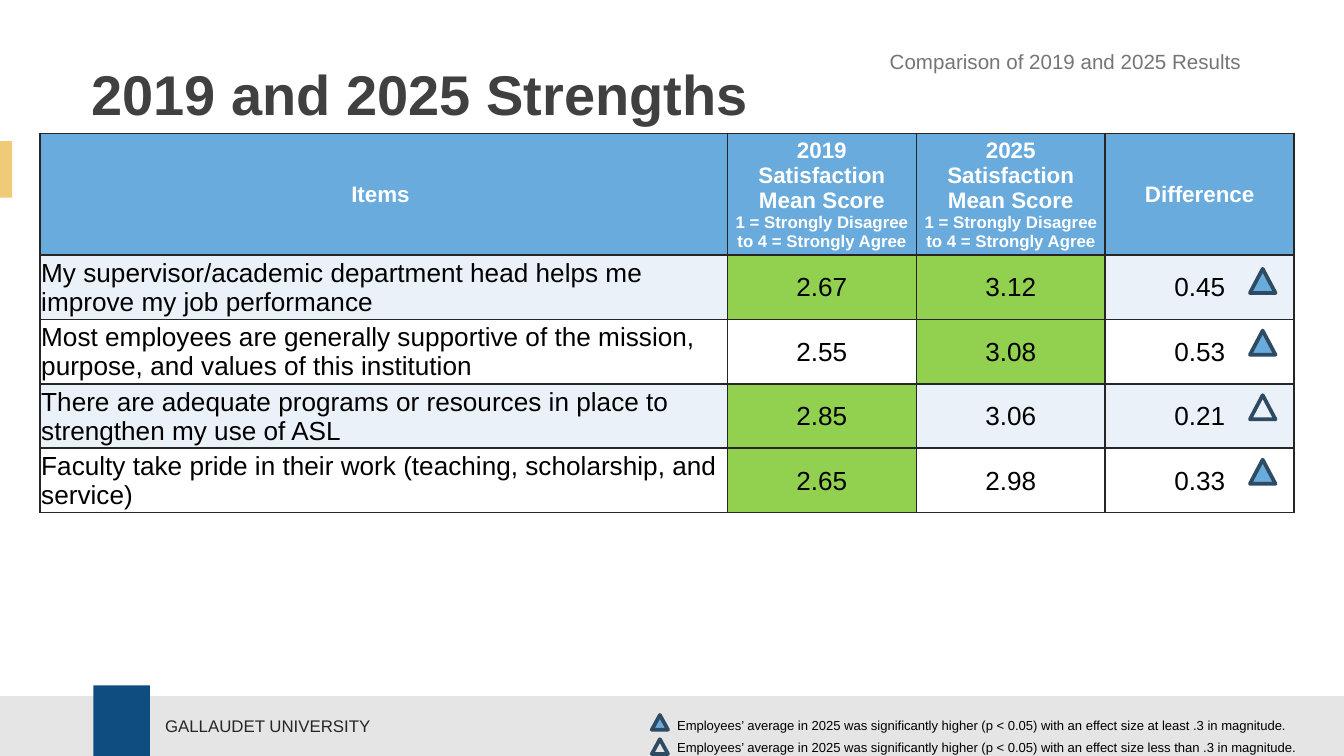
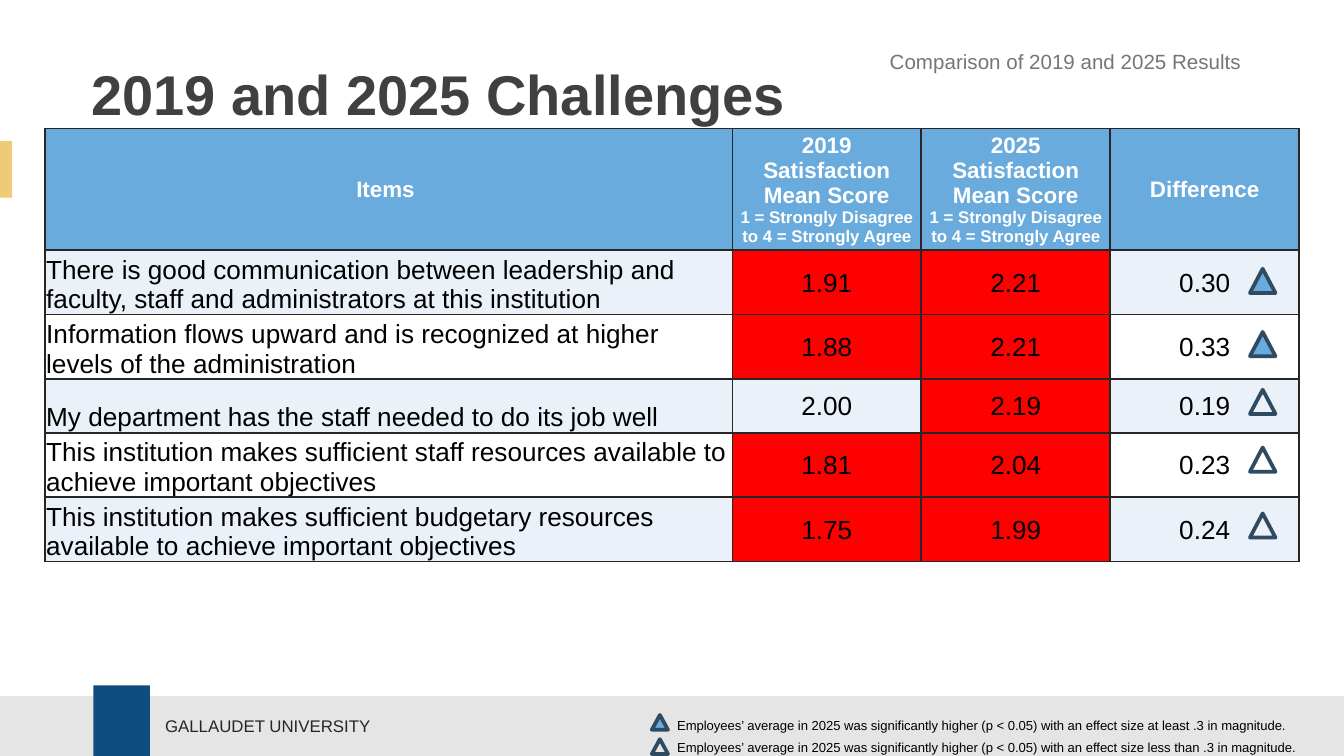
from dataclasses import dataclass

from lxml.etree import SubElement
from pptx import Presentation
from pptx.dml.color import RGBColor
from pptx.enum.shapes import MSO_SHAPE as Preset
from pptx.enum.text import MSO_ANCHOR as Anchor, MSO_AUTO_SIZE as AutoSize, PP_ALIGN as Align
from pptx.oxml.ns import qn
from pptx.util import Inches, Pt


@dataclass(frozen=True)
class Theme:
    font: str = "Arial"
    title: str = "404041"
    subtitle: str = "757575"
    footer: str = "252626"
    text: str = "000000"
    white: str = "FFFFFF"
    header: str = "69ABDD"
    band: str = "EBF1F9"
    border: str = "262626"
    strength: str = "92D050"
    challenge: str = "FF0000"
    marker_line: str = "2E4B61"
    accent: str = "EFCA77"
    footer_band: str = "E5E5E5"
    footer_block: str = "0F4D81"
    title_size: float = 30
    subtitle_size: float = 11
    footer_size: float = 9
    header_size: float = 12
    scale_size: float = 9
    cell_size: float = 14
    legend_size: float = 7
    legend_tail_size: float = 10.5


THEME = Theme()
COLUMNS, ROWS = 100, 56.25
SLIDE_WIDTH = Inches(10)
COLUMN_WIDTHS = (51.15, 14.06, 14.06, 14.06)
TABLE_ROW = 4
HEADER_MARGINS = (0.4, 0.02, 0.4, 0.02)
SCORE_MARGINS = (0.1, 0.1, 0.1, 0.02)
LEGEND_TAB = 10
LARGE_EFFECT = 0.3
SCALE = "1 = Strongly Disagree to 4 = Strongly Agree"
LEGEND = "\tEmployees’ average in 2025 was significantly higher (p < 0.05) with an effect size {} .3 in magnitude."
HEADINGS = (
    [[("Items ", THEME.header_size)]],
    [[("2019 Satisfaction Mean Score\n", THEME.header_size), (SCALE, THEME.scale_size)]],
    [[("2025", THEME.header_size)], [("Satisfaction Mean Score", THEME.header_size)],
     [(SCALE, THEME.scale_size)]],
    [[("Difference", THEME.header_size)]],
)

# item, 2019, 2025, difference, highlighted years, marker row
STRENGTHS = (
    ("My supervisor/academic department head helps me improve my job performance",
     "2.67", "3.12", "0.45", (2019, 2025), 20),
    ("Most employees are generally supportive of the mission, purpose, and values of this institution",
     "2.55", "3.08", "0.53", (2025,), 24.6),
    ("There are adequate programs or resources in place to strengthen my use of ASL",
     "2.85", "3.06", "0.21", (2019,), 29.4),
    ("Faculty take pride in their work (teaching, scholarship, and service)",
     "2.65", "2.98", "0.33", (2019,), 34.2),
)
CHALLENGES = (
    ("There is good communication between leadership and faculty, staff and administrators at this institution",
     "1.91", "2.21", "0.30", (2019, 2025), 20),
    ("Information flows upward and is recognized at higher levels of the administration",
     "1.88", "2.21", "0.33", (2019, 2025), 24.7),
    ("My department has the staff needed to do its job well",
     "2.00", "2.19", "0.19", (2025,), 29),
    ("This institution makes sufficient staff resources available to achieve important objectives",
     "1.81", "2.04", "0.23", (2019, 2025), 33.3),
    ("This institution makes sufficient budgetary resources available to achieve important objectives",
     "1.75", "1.99", "0.24", (2019, 2025), 38.2),
)


def grid(units):
    return round(SLIDE_WIDTH * units / COLUMNS)


def area(*units):
    return [grid(unit) for unit in units]


def rgb(value):
    return RGBColor.from_string(value)


def set_tab(paragraph, position):
    stops = SubElement(paragraph._p.get_or_add_pPr(), qn("a:tabLst"))
    SubElement(stops, qn("a:tab"), pos=str(grid(position)), algn="l")


def write(frame, paragraphs, color, align=Align.LEFT, anchor=Anchor.TOP, bold=False, tab=None):
    frame.word_wrap = True
    frame.vertical_anchor = anchor
    for index, runs in enumerate(paragraphs):
        paragraph = frame.add_paragraph() if index else frame.paragraphs[0]
        paragraph.alignment = align
        if tab:
            set_tab(paragraph, tab)
        for words, size in runs:
            run = paragraph.add_run()
            run.text = words.rstrip("\n")
            run.font.name = THEME.font
            run.font.size = Pt(size)
            run.font.bold = bold
            run.font.color.rgb = rgb(color)
            if words.endswith("\n"):
                paragraph.add_line_break()


def add_label(slide, place, paragraphs, color, **style):
    box = slide.shapes.add_textbox(*area(*place))
    write(box.text_frame, paragraphs, color, **style)


def add_block(slide, place, color):
    block = slide.shapes.add_shape(Preset.RECTANGLE, *area(*place))
    block.shadow.inherit = False
    block.fill.solid()
    block.fill.fore_color.rgb = rgb(color)
    block.line.fill.background()


def add_marker(slide, place, large):
    marker = slide.shapes.add_shape(Preset.ISOSCELES_TRIANGLE, *area(*place))
    marker.shadow.inherit = False
    if large:
        marker.fill.solid()
        marker.fill.fore_color.rgb = rgb(THEME.header)
    else:
        marker.fill.background()
    marker.line.color.rgb = rgb(THEME.marker_line)
    marker.line.width = Pt(2)


def add_frame(slide, heading):
    add_block(slide, (0, 10.5, 0.9, 4.2), THEME.accent)
    add_block(slide, (-0.3, 51.8, 100.9, 5), THEME.footer_band)
    add_block(slide, (6.95, 51, 4.2, 5.8), THEME.footer_block)
    add_label(slide, (11.3, 52.75, 39.5, 2.5), [[("GALLAUDET UNIVERSITY", THEME.footer_size)]],
              THEME.footer, anchor=Anchor.MIDDLE)
    add_label(slide, (52.85, 3.15, 40.5, 2.8),
              [[("Comparison of 2019 and 2025 Results", THEME.subtitle_size)]],
              THEME.subtitle, align=Align.RIGHT)
    title = slide.shapes.title
    title.left, title.top, title.width, title.height = area(5.8, 3.1, 87.5, 7.6)
    title.text_frame.auto_size = AutoSize.NONE
    write(title.text_frame, [[(heading, THEME.title_size)]], THEME.title,
          anchor=Anchor.MIDDLE, bold=True)


def set_borders(cell):
    properties = cell._tc.get_or_add_tcPr()
    for side in ("a:lnL", "a:lnR", "a:lnT", "a:lnB"):
        edge = SubElement(properties, qn(side), w=str(Pt(1)))
        SubElement(SubElement(edge, qn("a:solidFill")), qn("a:srgbClr"), val=THEME.border)


def fill_cell(cell, paragraphs, fill, color, margins, anchor=Anchor.MIDDLE, **style):
    set_borders(cell)
    cell.fill.solid()
    cell.fill.fore_color.rgb = rgb(fill)
    cell.margin_left, cell.margin_top, cell.margin_right, cell.margin_bottom = area(*margins)
    write(cell.text_frame, paragraphs, color, **style)
    cell.vertical_anchor = anchor


def add_scores(slide, left, top, items, highlight, item_anchor):
    holder = slide.shapes.add_table(len(items) + 1, len(COLUMN_WIDTHS),
                                    *area(left, top, sum(COLUMN_WIDTHS), TABLE_ROW * (len(items) + 1)))
    scores = holder.table
    scores.horz_banding = False
    for column, width in zip(scores.columns, COLUMN_WIDTHS):
        column.width = grid(width)
    for row in scores.rows:
        row.height = grid(TABLE_ROW)
    for column, heading in enumerate(HEADINGS):
        fill_cell(scores.cell(0, column), heading, THEME.header, THEME.white,
                  HEADER_MARGINS, align=Align.CENTER, bold=True)
    for row, (item, before, after, difference, marked, _) in enumerate(items, 1):
        band = THEME.band if row % 2 else THEME.white
        for column, words in enumerate((item, before, after, difference)):
            year = {1: 2019, 2: 2025}.get(column)
            fill_cell(scores.cell(row, column), [[(words, THEME.cell_size)]],
                      highlight if year in marked else band, THEME.text, SCORE_MARGINS,
                      align=Align.CENTER if column else Align.LEFT,
                      anchor=Anchor.MIDDLE if column else item_anchor)
    for _, _, _, difference, _, marker_row in items:
        add_marker(slide, (93, marker_row, 1.9, 1.8), float(difference) >= LARGE_EFFECT)


def add_legend(slide):
    add_label(slide, (39.4, 52.9, 58.7, 4),
              [[(LEGEND.format("at least"), THEME.legend_size)],
               [(LEGEND.format("less than"), THEME.legend_size), (" ", THEME.legend_tail_size)]],
              THEME.text, tab=LEGEND_TAB)
    for marker_row, large in ((53.2, True), (55, False)):
        add_marker(slide, (48.5, marker_row, 1.2, 1.1), large)


def add_comparison(deck, heading, left, top, items, highlight, item_anchor):
    slide = deck.slides.add_slide(deck.slide_layouts[5])
    add_frame(slide, heading)
    add_scores(slide, left, top, items, highlight, item_anchor)
    add_legend(slide)


def main():
    deck = Presentation()
    deck.slide_width, deck.slide_height = SLIDE_WIDTH, grid(ROWS)
    add_comparison(deck, "2019 and 2025 Strengths", 2.97, 9.93, STRENGTHS, THEME.strength, Anchor.MIDDLE)
    add_comparison(deck, "2019 and 2025 Challenges", 3.34, 9.57, CHALLENGES, THEME.challenge, Anchor.BOTTOM)
    deck.save("out.pptx")


if __name__ == "__main__":
    main()
